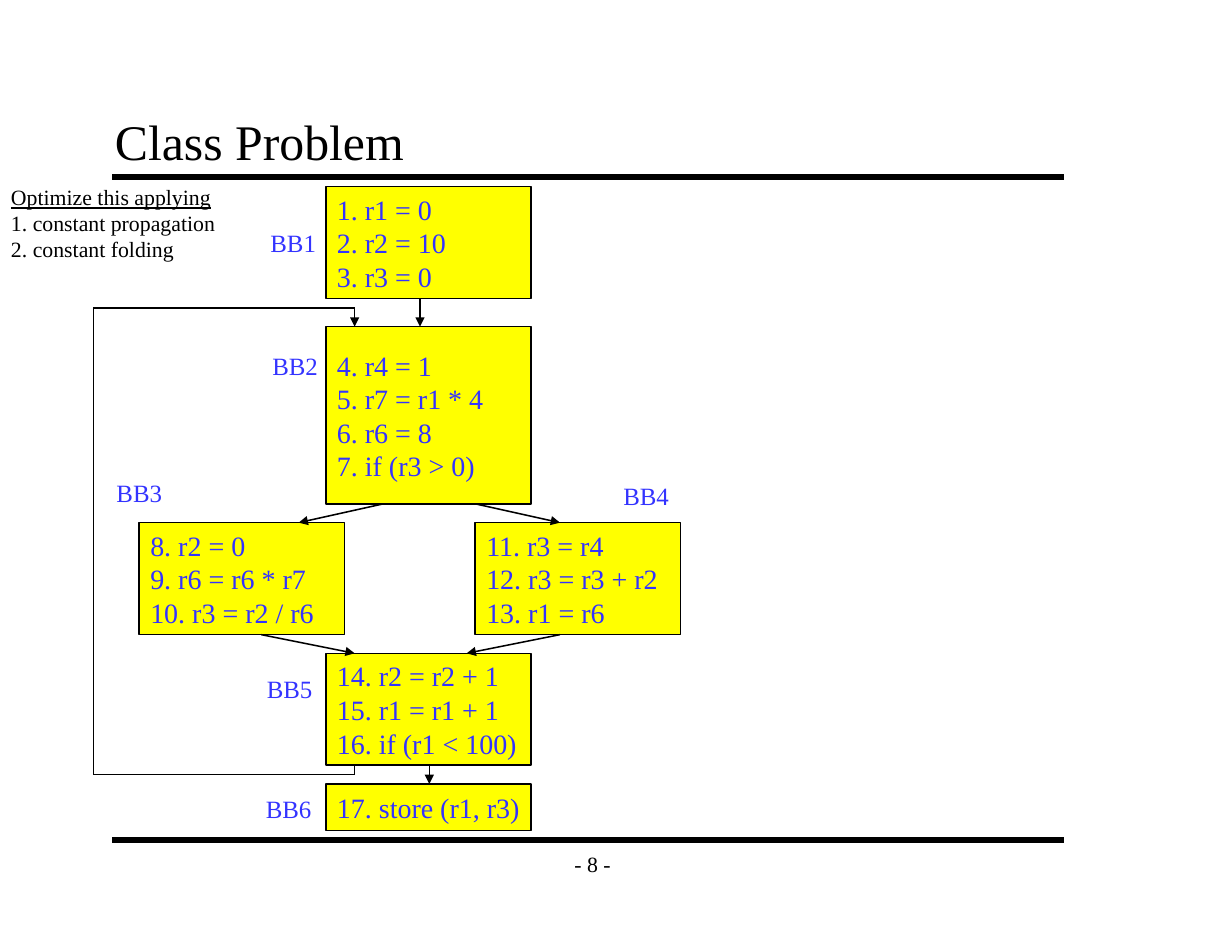
"""Build the Class Problem slide: a control flow graph of six basic blocks."""
import pptx
import pptx.util
import pptx.dml.color
import pptx.oxml
import pptx.oxml.ns
import pptx.enum.shapes
import pptx.enum.text

U = pptx.util.Inches(1) / 12
BLACK, BLUE, YELLOW = "000000", "3333FF", "FFFF00"
ALIGN = pptx.enum.text.PP_ALIGN
ANCHOR = pptx.enum.text.MSO_ANCHOR


def put_text(sp, lines, size, color, align=ALIGN.LEFT, **frame):
    tf = sp.text_frame
    for name, value in {"word_wrap": False, **frame}.items():
        setattr(tf, name, value)
    for i, line in enumerate(lines):
        p = tf.paragraphs[0] if i == 0 else tf.add_paragraph()
        p.alignment = align
        r = p.add_run()
        r.text = line
        for name, value in {"name": "Times New Roman", "size": pptx.util.Pt(size)}.items():
            setattr(r.font, name, value)
        r.font.color.rgb = pptx.dml.color.RGBColor.from_string(color)
    return tf


def add_line(x1, y1, x2, y2, width=1, arrow=False):
    cx = s.shapes.add_connector(pptx.enum.shapes.MSO_CONNECTOR.STRAIGHT,
                                *[round(v * U) for v in (x1, y1, x2, y2)])
    cx.line.width = pptx.util.Pt(width)
    cx.line.color.rgb = pptx.dml.color.RGBColor.from_string(BLACK)
    if arrow:
        ln = cx.line._get_or_add_ln()
        ln.append(pptx.oxml.parse_xml(f'<a:tailEnd {pptx.oxml.ns.nsdecls("a")} type="triangle"/>'))
    cx._element.spPr.append(pptx.oxml.parse_xml(f'<a:effectLst {pptx.oxml.ns.nsdecls("a")}/>'))


prs = pptx.Presentation()
prs.slide_width, prs.slide_height = pptx.util.Inches(11), pptx.util.Inches(8.5)
s = prs.slides.add_slide(prs.slide_layouts[6])

for y in (19, 90):
    add_line(12, y, 114, y, width=4)

inset = {"margin_left": pptx.util.Inches(0.11), "margin_right": pptx.util.Inches(0.11),
         "margin_top": pptx.util.Inches(0.06), "margin_bottom": pptx.util.Inches(0.06)}
texts = [
    ((59, 90, 9, 5), ["- 8 -"], 14, ALIGN.CENTER, {"vertical_anchor": ANCHOR.MIDDLE, **inset}),
    ((11, 11, 102, 8), ["Class Problem"], 32, ALIGN.LEFT,
     {"vertical_anchor": ANCHOR.BOTTOM, **inset, "word_wrap": True}),
    ((0, 19.1, 24.5, 9.7),
     ["Optimize this applying", "1. constant propagation", "2. constant folding"], 14, ALIGN.LEFT, {}),
]
for box, lines, size, align, frame in texts:
    sp = s.shapes.add_textbox(*[round(v * U) for v in box])
    tf = put_text(sp, lines, size, BLACK, align, **frame)
tf.paragraphs[0].runs[0].font.underline = True

blocks = [
    ("BB1", 27.8, 23.8, 35, 20, 12, ["1. r1 = 0", "2. r2 = 10", "3. r3 = 0"]),
    ("BB2", 28, 37, 35, 35, 19, ["4. r4 = 1", "5. r7 = r1 * 4", "6. r6 = 8", "7. if (r3 > 0)"]),
    ("BB3", 11.3, 50.6, 15, 56, 12, ["8. r2 = 0", "9. r6 = r6 * r7", "10. r3 = r2 / r6"]),
    ("BB4", 65.6, 50.9, 51, 56, 12, ["11. r3 = r4", "12. r3 = r3 + r2", "13. r1 = r6"]),
    ("BB5", 27.4, 71.6, 35, 70, 12, ["14. r2 = r2 + 1", "15. r1 = r1 + 1", "16. if (r1 < 100)"]),
    ("BB6", 27.3, 84.4, 35, 84, 5, ["17. store (r1, r3)"]),
]
for label, label_x, label_y, x, y, h, lines in blocks:
    sp = s.shapes.add_shape(pptx.enum.shapes.MSO_SHAPE.RECTANGLE,
                            *[round(v * U) for v in (x - 0.08, y, 22, h)])
    sp.shadow.inherit = False
    sp.fill.solid()
    sp.fill.fore_color.rgb = pptx.dml.color.RGBColor.from_string(YELLOW)
    sp.line.color.rgb = pptx.dml.color.RGBColor.from_string(BLACK)
    sp.line.width = pptx.util.Pt(1)
    put_text(sp, lines, 18, BLUE, vertical_anchor=ANCHOR.MIDDLE)
    sp = s.shapes.add_textbox(*[round(v * U) for v in (label_x, label_y, 7.3, 4.4)])
    put_text(sp, [label], 16, BLUE)

edges = [(45, 32, 45, 35), (41, 54, 32, 56), (51, 54, 60, 56),
         (28, 68, 38, 70), (60, 68, 50, 70), (46, 82, 46, 84)]
for edge in edges:
    add_line(*edge, arrow=True)

loop = [(38, 82), (38, 83), (10, 83), (10, 33), (38, 33), (38, 35)]
for start, end in zip(loop, loop[1:]):
    add_line(*start, *end, arrow=end == loop[-1])

prs.save("out.pptx")
